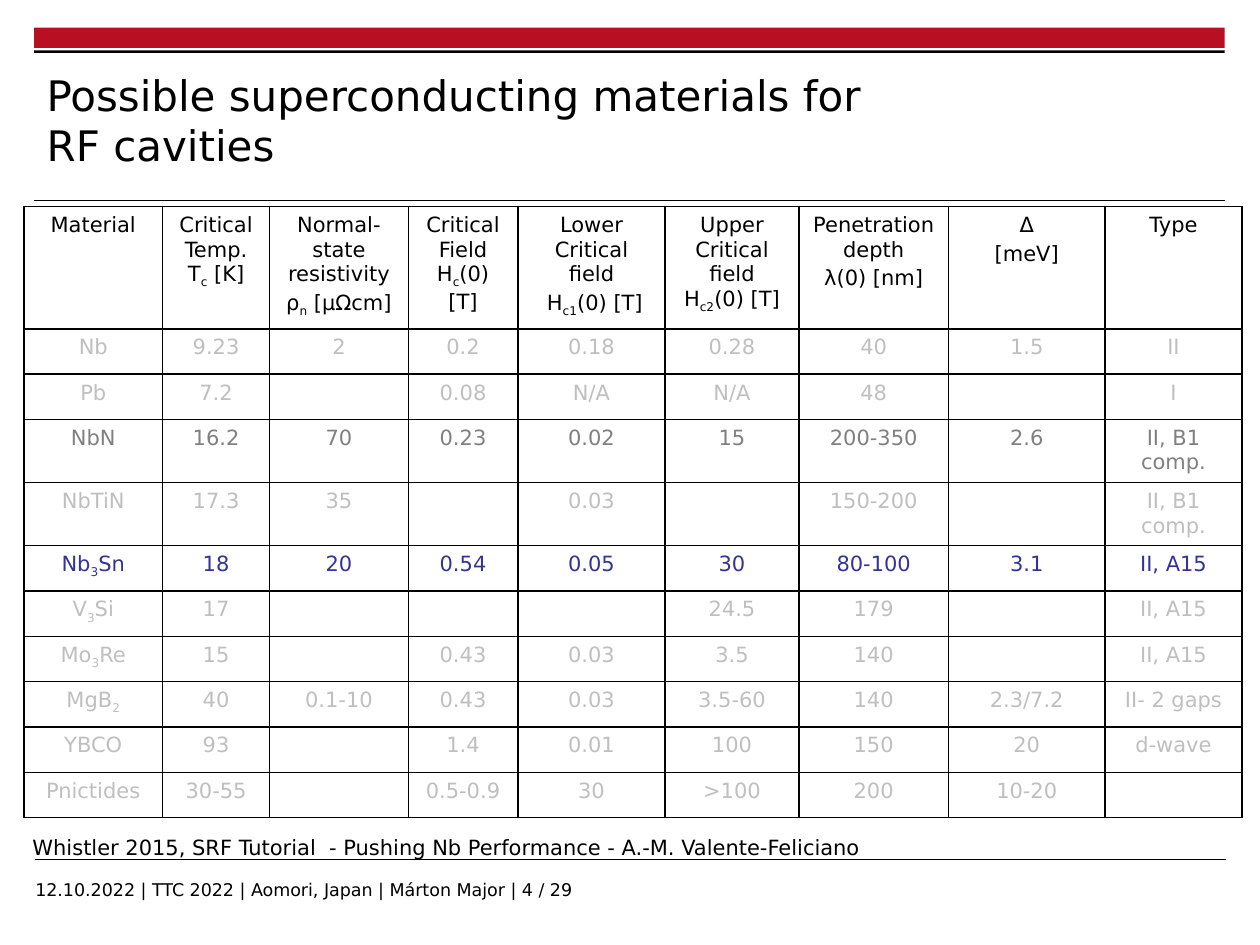
from lxml.etree import SubElement
from pptx import Presentation
from pptx.dml.color import RGBColor
from pptx.enum.shapes import MSO_CONNECTOR, MSO_SHAPE
from pptx.enum.text import MSO_ANCHOR, PP_ALIGN
from pptx.oxml import parse_xml
from pptx.oxml.ns import nsdecls, qn
from pptx.util import Inches, Pt

BLACK, WHITE, RED = "000000", "FFFFFF", "B90F22"
LIGHT, GREY, BLUE = "BFBFBF", "808080", "333399"

COLUMN_WIDTHS = [1.1, 0.85, 1.1, 0.87, 1.17, 1.06, 1.19, 1.24, 1.09]
HEADER = [
    "Material",
    "Critical\nTemp.\nT_c_ [K]",
    "Normal-state resistivity\nρ_n_ [μΩcm]",
    "Critical\nField\nH_c_(0) [T]",
    "Lower Critical field\n H_c1_(0) [T]",
    "Upper Critical field H_c2_(0) [T]",
    "Penetration depth\nλ(0) [nm]",
    "Δ\n[meV]",
    "Type",
]
TIGHT_COLUMNS = (1, 3)
MATERIALS = [
    ["Nb", "9.23", "2", "0.2", "0.18", "0.28", "40", "1.5", "II"],
    ["Pb", "7.2", "", "0.08", "N/A", "N/A", "48", "", "I"],
    ["NbN", "16.2", "70", "0.23", "0.02", "15", "200-350", "2.6", "II, B1 comp."],
    ["NbTiN", "17.3", "35", "", "0.03", "", "150-200", "", "II, B1 comp."],
    ["Nb_3_Sn", "18", "20", "0.54", "0.05", "30", "80-100", "3.1", "II, A15"],
    ["V_3_Si", "17", "", "", "", "24.5", "179", "", "II, A15"],
    ["Mo_3_Re", "15", "", "0.43", "0.03", "3.5", "140", "", "II, A15"],
    ["MgB_2_", "40", "0.1-10", "0.43", "0.03", "3.5-60", "140", "2.3/7.2", "II- 2 gaps"],
    ["YBCO", "93", "", "1.4", "0.01", "100", "150", "20", "d-wave"],
    ["Pnictides", "30-55", "", "0.5-0.9", "30", ">100", "200", "10-20", ""],
]
ROW_COLORS = {"NbN": GREY, "Nb_3_Sn": BLUE}


def color(value):
    return RGBColor.from_string(value)


class SlideBuilder:
    font_name = "DejaVu Sans"
    table_size = 12

    def __init__(self, deck):
        self.slide = deck.slides.add_slide(deck.slide_layouts[5])

    def style(self, para, size, ink=BLACK, align=PP_ALIGN.LEFT):
        para.alignment = align
        para.font.name = self.font_name
        para.font.size = Pt(size)
        para.font.color.rgb = color(ink)

    def title(self, text, left, top, width, height):
        box = self.slide.shapes.title
        box.left, box.top = Inches(left), Inches(top)
        box.width, box.height = Inches(width), Inches(height)
        frame = box.text_frame
        frame.text = text
        frame.word_wrap = True
        frame.vertical_anchor = MSO_ANCHOR.TOP
        self.style(frame.paragraphs[0], 24)

    def bar(self, left, top, width, height, fill):
        bar = self.slide.shapes.add_shape(
            MSO_SHAPE.RECTANGLE, Inches(left), Inches(top), Inches(width), Inches(height))
        bar.shadow.inherit = False
        bar.fill.solid()
        bar.fill.fore_color.rgb = color(fill)
        bar.line.fill.background()

    def rule(self, left, top, width):
        rule = self.slide.shapes.add_connector(
            MSO_CONNECTOR.STRAIGHT, Inches(left), Inches(top), Inches(left + width), Inches(top))
        rule.line.color.rgb = color(BLACK)
        rule.line.width = Pt(0.6)
        SubElement(rule._element.spPr, qn("a:effectLst"))

    def text(self, text, left, top, width, height, size, inset=True):
        box = self.slide.shapes.add_textbox(
            Inches(left), Inches(top), Inches(width), Inches(height))
        frame = box.text_frame
        frame.word_wrap = True
        if not inset:
            frame.margin_left = frame.margin_right = 0
            frame.margin_top = frame.margin_bottom = 0
        frame.text = text
        self.style(frame.paragraphs[0], size)

    def cell(self, cell, text, ink, spacing):
        cell.fill.solid()
        cell.fill.fore_color.rgb = color(WHITE)
        properties = cell._tc.get_or_add_tcPr()
        for index, side in enumerate(("lnL", "lnR", "lnT", "lnB")):
            properties.insert(index, parse_xml(
                f'<a:{side} {nsdecls("a")} w="12700"><a:solidFill>'
                f'<a:srgbClr val="{BLACK}"/></a:solidFill></a:{side}>'))
        frame = cell.text_frame
        for index, line in enumerate(text.split("\n")):
            para = frame.add_paragraph() if index else frame.paragraphs[0]
            self.style(para, self.table_size, ink, PP_ALIGN.CENTER)
            if index:
                para.space_before = Pt(spacing)
            for position, part in enumerate(line.split("_")):
                if part:
                    span = para.add_run()
                    span.text = part
                    if position % 2:
                        span._r.get_or_add_rPr().set("baseline", "-25000")
            if not line:
                SubElement(para._p, qn("a:endParaRPr"), sz=str(self.table_size * 100))

    def table(self, left, top, widths, heights, rows):
        frame = self.slide.shapes.add_table(
            len(rows), len(widths), Inches(left), Inches(top),
            Inches(sum(widths)), Inches(sum(heights)))
        table = frame.table
        table.first_row = table.horz_banding = False
        for column, width in zip(table.columns, widths):
            column.width = Inches(width)
        for row, height in zip(table.rows, heights):
            row.height = Inches(height)
        for row_index, values in enumerate(rows):
            ink = ROW_COLORS.get(values[0], LIGHT) if row_index else BLACK
            for column_index, value in enumerate(values):
                spacing = 0 if column_index in TIGHT_COLUMNS else 2.4
                self.cell(table.cell(row_index, column_index), value, ink, spacing)


def main():
    deck = Presentation()
    deck.slide_width, deck.slide_height = Inches(10), Inches(7.5)
    page = SlideBuilder(deck)
    page.bar(0.27, 0.22, 9.45, 0.16, RED)
    page.rule(0.27, 1.59, 9.45)
    page.rule(0.28, 6.82, 9.45)
    page.bar(0.27, 0.4, 9.45, 0.02, BLACK)
    page.text("12.10.2022 | TTC 2022 | Aomori, Japan | Márton Major | 4 / 29",
              0.28, 6.98, 9.48, 0.21, 10, inset=False)
    page.title("Possible superconducting materials for RF cavities", 0.27, 0.5, 6.77, 0.91)
    heights = [0.97] + [0.5 if "comp." in row[-1] else 0.36 for row in MATERIALS]
    page.table(0.19, 1.64, COLUMN_WIDTHS, heights, [HEADER] + MATERIALS)
    page.text("Whistler 2015, SRF Tutorial  - Pushing Nb Performance - A.-M. Valente-Feliciano",
              0.16, 6.57, 7.83, 0.31, 12)
    deck.save("out.pptx")


if __name__ == "__main__":
    main()
